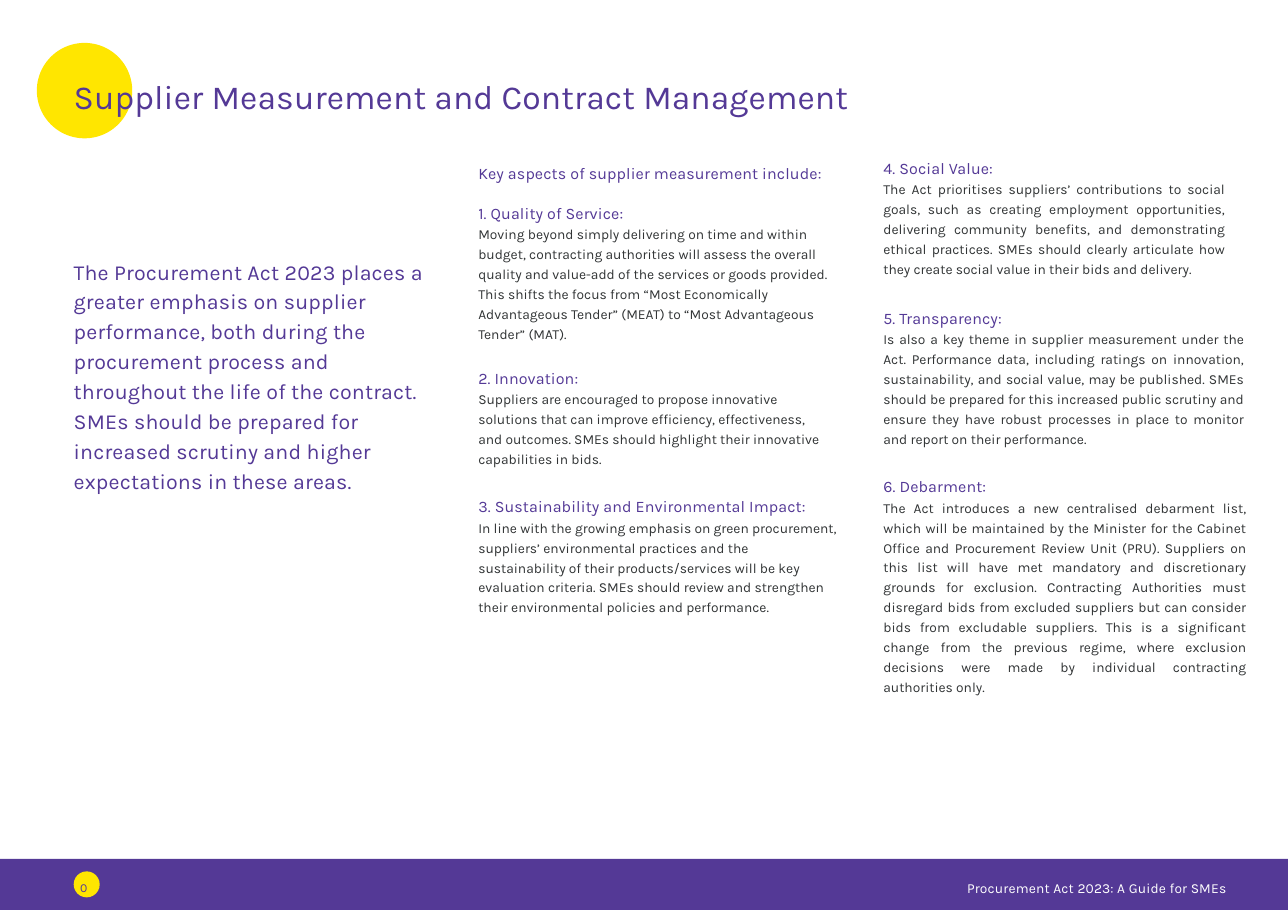
import pptx
import pptx.dml.color
import pptx.enum.shapes
import pptx.enum.text
import pptx.util
from pptx.util import Cm

PURPLE = pptx.dml.color.RGBColor(0x54, 0x39, 0x96)
YELLOW = pptx.dml.color.RGBColor(0xFF, 0xE6, 0x00)
GREY = pptx.dml.color.RGBColor(0x31, 0x34, 0x35)
WHITE = pptx.dml.color.RGBColor(0xFF, 0xFF, 0xFF)
LEFT = pptx.enum.text.PP_ALIGN.LEFT
JUSTIFY = pptx.enum.text.PP_ALIGN.JUSTIFY
OVAL = pptx.enum.shapes.MSO_SHAPE.OVAL
RECTANGLE = pptx.enum.shapes.MSO_SHAPE.RECTANGLE

PAGE_WIDTH, PAGE_HEIGHT = 29.7, 20.98
MARGIN = 1.7
MIDDLE_COLUMN, RIGHT_COLUMN = 11.03, 20.37


def place_text(shape, box, lines, alignment=LEFT, wrap=True):
    """Fill a shape with lines of (text, size, line spacing, colour, tracking)."""
    shape.left, shape.top, shape.width, shape.height = map(Cm, box)
    frame = shape.text_frame
    frame.word_wrap = wrap
    frame.auto_size = pptx.enum.text.MSO_AUTO_SIZE.SHAPE_TO_FIT_TEXT
    frame.vertical_anchor = pptx.enum.text.MSO_ANCHOR.TOP
    frame.margin_left = frame.margin_right = frame.margin_top = frame.margin_bottom = 0
    for index, (text, size, spacing, colour, tracking) in enumerate(lines):
        paragraph = frame.add_paragraph() if index else frame.paragraphs[0]
        paragraph.alignment = alignment
        paragraph.line_spacing = pptx.util.Pt(spacing)
        run = paragraph.add_run()
        run.text = text
        run.font.name = "Karla"
        run.font.size = pptx.util.Pt(size)
        run.font.color.rgb = colour
        run._r.get_or_add_rPr().set("spc", str(tracking))


presentation = pptx.Presentation()
presentation.slide_width = Cm(PAGE_WIDTH)
presentation.slide_height = Cm(PAGE_HEIGHT)
slide = presentation.slides.add_slide(presentation.slide_layouts[5])
shapes = slide.shapes

# Title circle, footer bar and page number circle
for preset, box, colour in [
    (OVAL, (0.85, 0.99, 2.2, 2.2), YELLOW),
    (RECTANGLE, (0, 19.8, PAGE_WIDTH, PAGE_HEIGHT - 19.8), PURPLE),
    (OVAL, (MARGIN, 20.09, 0.6, 0.6), YELLOW),
]:
    shape = shapes.add_shape(preset, *map(Cm, box))
    shape.shadow.inherit = False
    shape.fill.solid()
    shape.fill.fore_color.rgb = colour
    shape.line.fill.background()

# The title goes in front of its circle
title = shapes.title
place_text(title, (MARGIN, 1.6, 17.98, 0.99),
           [("Supplier Measurement and Contract Management", 22, 30.8, PURPLE, 10)])
title.element.getparent().append(title.element)

# Single-paragraph texts
for box, text, size, spacing, colour, tracking, wrap in [
    ((MARGIN, 5.87, 8.38, 5.46),
     "The Procurement Act 2023 places a greater emphasis on supplier performance, both during "
     "the procurement process and throughout the life of the contract. SMEs should be prepared "
     "for increased scrutiny and higher expectations in these areas.",
     14, 19.5, PURPLE, 10, True),
    ((MIDDLE_COLUMN, 3.3, 8.13, 0.79),
     "Key aspects of supplier measurement include:", 10.5, 26, PURPLE, 10, True),
    ((22.3, 20.22, 6.32, 0.38),
     "Procurement Act 2023: A Guide for SMEs", 9, 12.6, WHITE, 10, True),
    ((1.85, 20.24, 0.3, 0.36), "08", 8, 11.2, PURPLE, 0, False),
]:
    place_text(shapes.add_textbox(0, 0, 0, 0), box,
               [(text, size, spacing, colour, tracking)], wrap=wrap)

# Numbered aspects: box, alignment, heading line spacing, heading, body
for box, alignment, heading_spacing, heading, body in [
    ((MIDDLE_COLUMN, 4.22, 8.31, 3.76), LEFT, 26, "1. Quality of Service:",
     "Moving beyond simply delivering on time and within budget, contracting authorities will "
     "assess the overall quality and value-add of the services or goods provided. This shifts "
     "the focus from “Most Economically Advantageous Tender” (MEAT) to “Most Advantageous "
     "Tender” (MAT)."),
    ((MIDDLE_COLUMN, 8.41, 8.05, 2.57), LEFT, 14.7, "2. Innovation:",
     "Suppliers are encouraged to propose innovative solutions that can improve efficiency, "
     "effectiveness, and outcomes. SMEs should highlight their innovative capabilities in bids."),
    ((MIDDLE_COLUMN, 11.38, 8.26, 3.02), LEFT, 14.7,
     "3. Sustainability and Environmental Impact:",
     "In line with the growing emphasis on green procurement, suppliers’ environmental practices "
     "and the sustainability of their products/services will be key evaluation criteria. SMEs "
     "should review and strengthen their environmental policies and performance."),
    ((RIGHT_COLUMN, 3.58, 7.87, 3.02), JUSTIFY, 14.7, "4. Social Value:",
     "The Act prioritises suppliers’ contributions to social goals, such as creating employment "
     "opportunities, delivering community benefits, and demonstrating ethical practices. SMEs "
     "should clearly articulate how they create social value in their bids and delivery."),
    ((RIGHT_COLUMN, 7.04, 8.31, 3.48), JUSTIFY, 14.7, "5. Transparency:",
     "Is also a key theme in supplier measurement under the Act. Performance data, including "
     "ratings on innovation, sustainability, and social value, may be published. SMEs should be "
     "prepared for this increased public scrutiny and ensure they have robust processes in place "
     "to monitor and report on their performance."),
    ((RIGHT_COLUMN, 10.92, 8.36, 5.31), JUSTIFY, 14.7, "6. Debarment:",
     "The Act introduces a new centralised debarment list, which will be maintained by the "
     "Minister for the Cabinet Office and Procurement Review Unit (PRU). Suppliers on this list "
     "will have met mandatory and discretionary grounds for exclusion. Contracting Authorities "
     "must disregard bids from excluded suppliers but can consider bids from excludable "
     "suppliers. This is a significant change from the previous regime, where exclusion "
     "decisions were made by individual contracting authorities only."),
]:
    place_text(shapes.add_textbox(0, 0, 0, 0), box,
               [(heading, 10.5, heading_spacing, PURPLE, 10), (body, 9, 13, GREY, 0)],
               alignment)

presentation.save("out.pptx")
